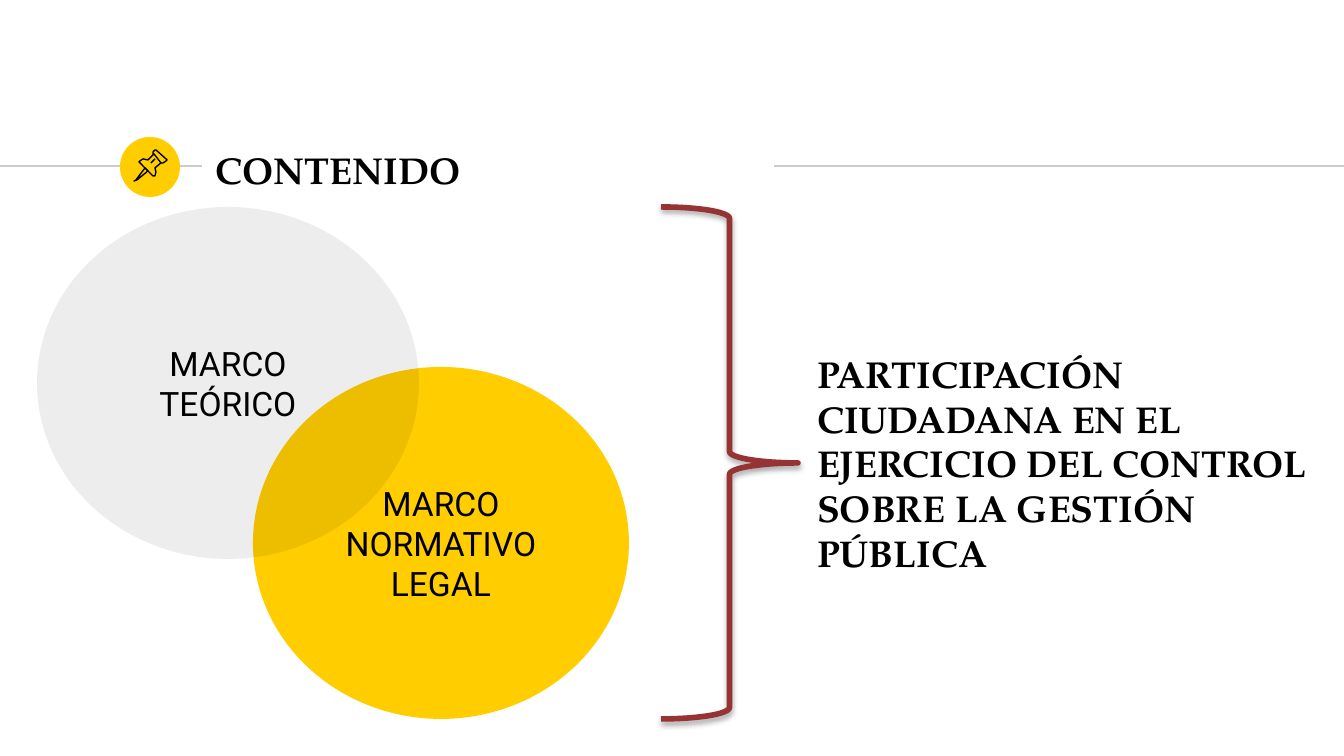
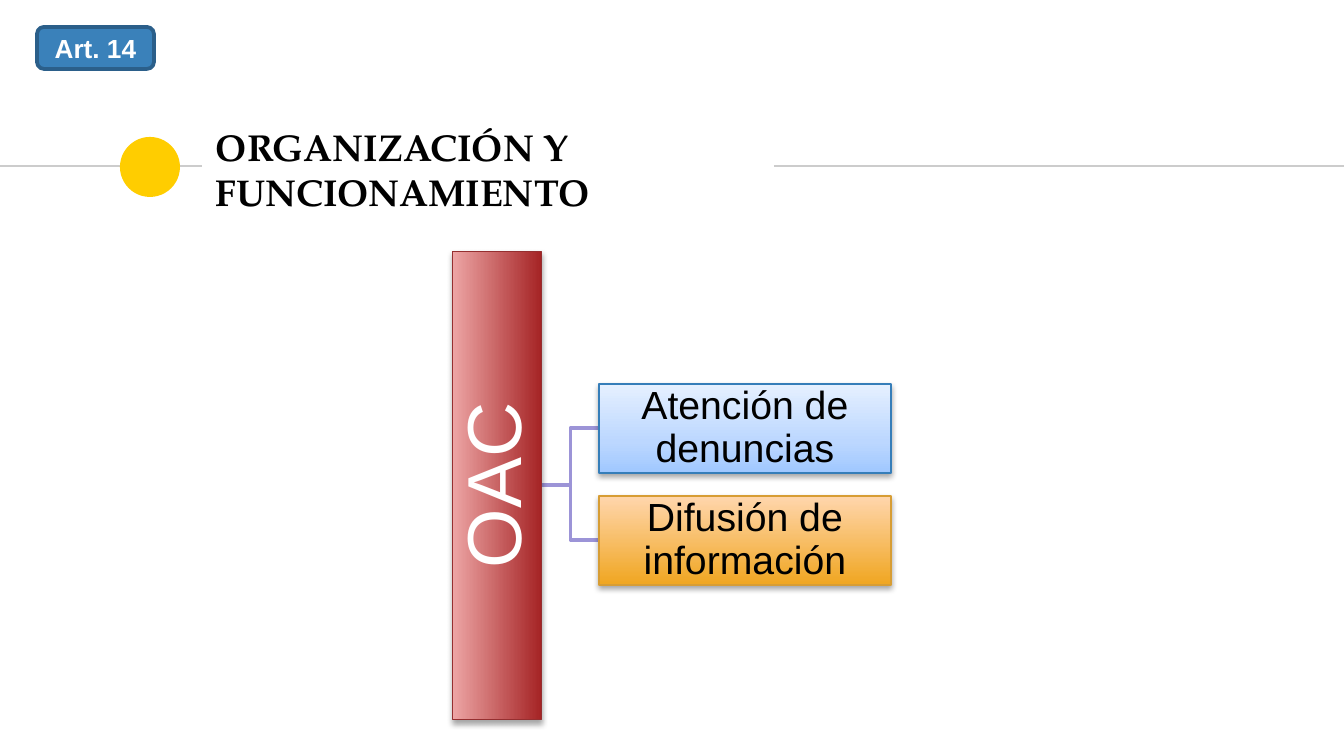
import pptx
import pptx.util
import pptx.dml.color
import pptx.enum.shapes
import pptx.enum.text
import pptx.oxml
import pptx.oxml.ns
from lxml import etree

SCALE = 914400 / 134.4  # EMU in one px
KIND = pptx.enum.shapes.MSO_SHAPE
LINK = pptx.enum.shapes.MSO_CONNECTOR
ALIGN = pptx.enum.text.PP_ALIGN
MIDDLE = pptx.enum.text.MSO_ANCHOR.MIDDLE


class Theme:
    black, white = "000000", "FFFFFF"
    rule, gold = "CCCCCC", "FFCD00"
    brace = "963334"
    tag, tagline = "3A81BA", "2B5F8A"
    tree = "9C94D7"
    red, redline = [(0, "A52425"), (100, "EDA5A5")], "952F30"
    blue, blueline = [(0, "A0C8FF"), (35, "BCD7FF"), (100, "E5F0FF")], "367EB9"
    amber, amberline = [(0, "F0A621"), (100, "FFD6AD")], "D79D34"
    serif, sans, plain = "TeX Gyre Pagella", "Roboto", "Arial"
    head, body, label, root, leaf = 20, 18, 14, 41, 21
    thin, mid, thick = 0.75, 2, 3


def px(n):
    return pptx.util.Emu(round(n * SCALE))


def rgb(color):
    return pptx.dml.color.RGBColor.from_string(color)


def add(parent, tag, **attrs):
    node = etree.SubElement(parent, pptx.oxml.ns.qn(tag))
    for key, value in attrs.items():
        node.set(key, str(value))
    return node


def tint(parent, color, alpha=100):
    node = add(parent, "a:srgbClr", val=color)
    if alpha < 100:
        add(node, "a:alpha", val=alpha * 1000)


# Text, in a box or in a shape
def write(shape, text, font=Theme.plain, size=Theme.body, color=Theme.black,
          bold=False, align=ALIGN.LEFT, inset=(13, 13), spacing=None):
    frame = shape.text_frame
    frame.word_wrap = True
    frame.vertical_anchor = MIDDLE
    frame.margin_left = frame.margin_right = px(inset[0])
    frame.margin_top = frame.margin_bottom = px(inset[1])
    para = frame.paragraphs[0]
    para.alignment = align
    if spacing:
        para.line_spacing = spacing
    run = para.add_run()
    run.text = text
    run.font.name = font
    run.font.size = pptx.util.Pt(size)
    run.font.bold = bold
    run.font.color.rgb = rgb(color)


def title(slide, text, x, y, w, h):
    box = slide.shapes.add_textbox(px(x), px(y), px(w), px(h))
    write(box, text, font=Theme.serif, size=Theme.head, bold=True)


# Lines and fills
def stroke(item, color, width):
    if color:
        item.line.color.rgb = rgb(color)
        item.line.width = pptx.util.Pt(width)
    else:
        item.line.fill.background()


def blend(shape, stops):
    shape.fill.gradient()
    shape.fill.gradient_angle = 90
    stack = shape._element.spPr.find(".//" + pptx.oxml.ns.qn("a:gsLst"))
    for old in list(stack):
        stack.remove(old)
    for pos, color in stops:
        tint(add(stack, "a:gs", pos=pos * 1000), color)


def paint(shape, fill, alpha=100):
    if fill is None:
        shape.fill.background()
    elif isinstance(fill, list):
        blend(shape, fill)
    else:
        shape.fill.solid()
        shape.fill.fore_color.rgb = rgb(fill)
        if alpha < 100:
            node = shape._element.spPr.find(".//" + pptx.oxml.ns.qn("a:srgbClr"))
            add(node, "a:alpha", val=alpha * 1000)


def shade(shape, alpha=35, blur=3.1, drop=1.8):
    effects = shape._element.spPr.find(pptx.oxml.ns.qn("a:effectLst"))
    node = add(effects, "a:outerShdw", blurRad=pptx.util.Pt(blur),
               dist=pptx.util.Pt(drop), dir=5400000, rotWithShape=0)
    tint(node, Theme.black, alpha)


# Shapes
def form(slide, kind, x, y, w, h, fill=None, alpha=100, line=None,
         width=Theme.thin, shadow=False):
    shape = slide.shapes.add_shape(kind, px(x), px(y), px(w), px(h))
    shape.shadow.inherit = False
    paint(shape, fill, alpha)
    stroke(shape, line, width)
    if shadow:
        shade(shape)
    return shape


def join(slide, start, end, color, width=Theme.thin, kind=LINK.STRAIGHT):
    line = slide.shapes.add_connector(kind, *map(px, start + end))
    stroke(line, color, width)
    add(line._element.spPr, "a:effectLst")


def trace(slide, points, close):
    pen = slide.shapes.build_freeform(*points[0], scale=SCALE)
    pen.add_line_segments(points[1:], close=close)
    shape = pen.convert_to_shape()
    shape.shadow.inherit = False
    paint(shape, None)
    stroke(shape, Theme.black, Theme.thin)


def pin(slide):
    tip = [(145, 168), (136, 180), (134, 181), (137, 180), (148, 171)]
    cap = [(154, 154), (161, 163), (163, 163), (166, 161), (167, 160),
           (166, 159), (156, 150), (155, 150), (153, 152), (153, 154)]
    stem = [(154, 154), (148, 160), (143, 159), (140, 161), (139, 162),
            (153, 176), (155, 176), (156, 172), (155, 168), (161, 163)]
    trace(slide, tip, True)
    trace(slide, cap, True)
    trace(slide, stem, False)
    join(slide, (151, 163), (155, 159), Theme.black)


# What both slides share
def start(deck, text):
    slide = deck.slides.add_slide(deck.slide_layouts[6])
    join(slide, (0, 166), (202, 166), Theme.rule)
    form(slide, KIND.OVAL, 120, 137, 60, 60, fill=Theme.gold)
    join(slide, (774, 166), (1344, 166), Theme.rule)
    title(slide, text, 203, 137, 570, 65)
    return slide


def topics(deck):
    slide = start(deck, "CONTENIDO")
    pin(slide)
    # Overlapping circles
    for text, x, y, w, fill, alpha in (
            ("MARCO NORMATIVO LEGAL", 253, 367, 376, Theme.gold, 100),
            ("MARCO TEÓRICO", 37, 207, 382, Theme.black, 7)):
        disc = form(slide, KIND.OVAL, x, y, w, 352, fill=fill, alpha=alpha)
        write(disc, text, font=Theme.sans, align=ALIGN.CENTER)
    # Brace and its conclusion
    form(slide, KIND.RIGHT_BRACE, 661, 207, 137, 512, line=Theme.brace,
         width=Theme.thick, shadow=True)
    title(slide, "PARTICIPACIÓN CIUDADANA EN EL EJERCICIO DEL CONTROL "
          "SOBRE LA GESTIÓN PÚBLICA", 804, 312, 546, 302)


def office(deck):
    slide = start(deck, "ORGANIZACIÓN Y FUNCIONAMIENTO")
    # Article tag
    tag = form(slide, KIND.ROUNDED_RECTANGLE, 37, 27, 117, 42, fill=Theme.tag,
               line=Theme.tagline, width=Theme.mid)
    write(tag, "Art. 14", size=Theme.label, color=Theme.white, bold=True,
          align=ALIGN.CENTER, inset=(13, 7))
    # Tree: upright root, then leaves at an equal step
    left, top, wide, high, step = 599, 384, 292, 89, 112
    leaves = (("Atención de denuncias", Theme.blue, Theme.blueline),
              ("Difusión de información", Theme.amber, Theme.amberline))
    for i in range(len(leaves)):
        join(slide, (542, 485), (left, top + i * step + high // 2),
             Theme.tree, Theme.mid, LINK.ELBOW)
    root = form(slide, KIND.RECTANGLE, 263, 441, 468, high, fill=Theme.red,
                line=Theme.redline, shadow=True)
    root.rotation = 270
    write(root, "OAC", size=Theme.root, color=Theme.white,
          align=ALIGN.CENTER, inset=(4, 4), spacing=0.9)
    for i, (text, fill, line) in enumerate(leaves):
        leaf = form(slide, KIND.RECTANGLE, left, top + i * step, wide, high,
                    fill=fill, line=line, shadow=True)
        write(leaf, text, size=Theme.leaf, align=ALIGN.CENTER,
              inset=(1, 1), spacing=0.9)


def main():
    deck = pptx.Presentation()
    deck.slide_width, deck.slide_height = px(1344), px(756)
    topics(deck)
    office(deck)
    deck.save("out.pptx")


if __name__ == "__main__":
    main()
